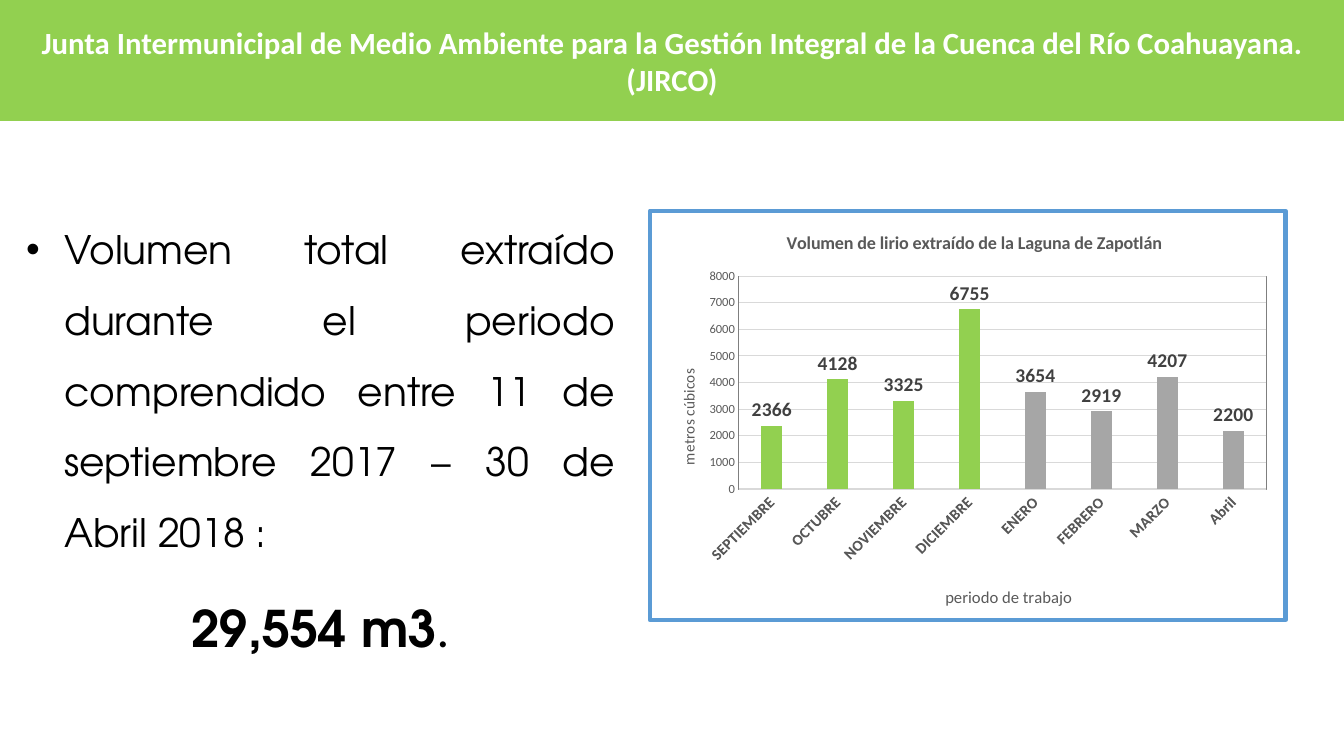
from lxml import etree
from pptx import Presentation, util as u
from pptx.chart.data import CategoryChartData
from pptx.dml.color import RGBColor
from pptx.enum import chart as ch, shapes, text
from pptx.oxml import parse_xml
from pptx.oxml.ns import nsdecls, qn

COLORS = {"green": "92D050", "white": "FFFFFF", "black": "000000", "blue": "5B9BD5",
          "gray": "A6A6A6", "text": "595959", "label": "404040", "grid": "D9D9D9",
          "frame": "7F7F7F"}
BODY_FONT = "TeX Gyre Adventor"
VOLUMES = {"SEPTIEMBRE": 2366, "OCTUBRE": 4128, "NOVIEMBRE": 3325, "DICIEMBRE": 6755,
           "ENERO": 3654, "FEBRERO": 2919, "MARZO": 4207, "Abril": 2200}
GREEN_MONTHS = 4


def color(name):
    return RGBColor.from_string(COLORS[name])


def format_font(font, size, fill="black", bold=False, name="Calibri"):
    font.size, font.bold, font.name = u.Pt(size), bold, name
    font.color.rgb = color(fill)


def add_text(paragraph, content, align=text.PP_ALIGN.CENTER, **style):
    paragraph.alignment = align
    run = paragraph.add_run()
    run.text = content
    format_font(run.font, **style)


def set_line(line, name, width=0.75):
    line.color.rgb = color(name)
    line.width = u.Pt(width)


def add_header(slide, box):
    header = slide.shapes.add_shape(shapes.MSO_SHAPE.RECTANGLE, *box)
    header.shadow.inherit = False
    header.fill.solid()
    header.fill.fore_color.rgb = color("green")
    header.line.fill.background()
    frame = header.text_frame
    frame.word_wrap = True
    frame.vertical_anchor = text.MSO_ANCHOR.MIDDLE
    add_text(frame.paragraphs[0],
             "Junta Intermunicipal de Medio Ambiente para la Gestión Integral "
             "de la Cuenca del Río Coahuayana. (JIRCO)",
             size=22, fill="white", bold=True)


def add_summary(slide, box):
    frame = slide.shapes.add_textbox(*box).text_frame
    frame.word_wrap = True
    frame.auto_size = text.MSO_AUTO_SIZE.SHAPE_TO_FIT_TEXT
    period, total = frame.paragraphs[0], frame.add_paragraph()
    for paragraph in (period, total):
        paragraph.line_spacing = 1.5
        paragraph.space_after = u.Pt(8)

    # Bulleted period with a hanging indent
    properties = period._p.get_or_add_pPr()
    indent = u.Inches(0.38)
    properties.set("marL", str(indent))
    properties.set("indent", str(-indent))
    etree.SubElement(properties, qn("a:buFont")).set("typeface", "Arial")
    etree.SubElement(properties, qn("a:buChar")).set("char", "•")
    add_text(period, "Volumen total extraído durante el periodo comprendido entre "
             "11 de septiembre 2017 – 30 de Abril 2018 :",
             align=text.PP_ALIGN.JUSTIFY, size=28, name=BODY_FONT)

    # Total
    add_text(total, "29,554 m3", size=36, bold=True, name=BODY_FONT)
    add_text(total, ".", size=36)


def set_layout(element, x, y, width=None, height=None):
    """Place a chart part by shares of the chart's size."""
    for old in element.findall(qn("c:layout")):
        element.remove(old)
    layout = etree.Element(qn("c:layout"))
    manual = etree.SubElement(layout, qn("c:manualLayout"))
    values = [("xMode", "edge"), ("yMode", "edge"), ("x", x), ("y", y)]
    if width:
        values.insert(0, ("layoutTarget", "inner"))
        values += [("w", width), ("h", height)]
    for tag, value in values:
        etree.SubElement(manual, qn(f"c:{tag}")).set("val", str(value))
    caption = element.find(qn("c:tx"))
    if caption is None:
        element.insert(0, layout)
    else:
        caption.addnext(layout)


def add_title(title, content, x, y, rotation=0, **style):
    frame = title.text_frame
    add_text(frame.paragraphs[0], content, fill="text", **style)
    body = frame._txBody.find(qn("a:bodyPr"))
    body.set("rot", str(rotation * 60000))
    body.set("vert", "horz")
    set_layout(title._element, x, y)


def outline(name, width):
    return parse_xml(
        f'<c:spPr {nsdecls("c", "a")}><a:noFill/><a:ln w="{u.Pt(width)}"><a:solidFill>'
        f'<a:srgbClr val="{COLORS[name]}"/></a:solidFill></a:ln></c:spPr>')


def add_volume_chart(slide, box):
    data = CategoryChartData()
    data.categories = list(VOLUMES)
    data.add_series("Volumen", list(VOLUMES.values()))
    chart = slide.shapes.add_chart(ch.XL_CHART_TYPE.COLUMN_CLUSTERED, *box, data).chart
    format_font(chart.font, 10)
    chart.has_legend = False

    # Bars and value labels
    plot = chart.plots[0]
    plot.gap_width, plot.overlap, plot.vary_by_categories = 219, -27, False
    series = plot.series[0]
    series.format.fill.solid()
    series.format.fill.fore_color.rgb = color("gray")
    for index in range(GREEN_MONTHS):
        fill = series.points[index].format.fill
        fill.solid()
        fill.fore_color.rgb = color("green")
    labels = series.data_labels
    labels.show_value = True
    labels.position = ch.XL_LABEL_POSITION.OUTSIDE_END
    format_font(labels.font, 14, "label", True)

    # Axes
    months, volume = chart.category_axis, chart.value_axis
    for axis in (months, volume):
        axis.major_tick_mark = axis.minor_tick_mark = ch.XL_TICK_MARK.NONE
    format_font(months.tick_labels.font, 11, "text", True)
    format_font(volume.tick_labels.font, 9, "text")
    months._element.find(qn("c:txPr")).find(qn("a:bodyPr")).set("rot", str(-45 * 60000))
    set_line(months.format.line, "grid")
    volume.format.line.fill.background()
    volume.minimum_scale, volume.maximum_scale, volume.major_unit = 0, 8000, 1000
    set_line(volume.major_gridlines.format.line, "grid")

    # Titles
    chart.has_title = True
    add_title(chart.chart_title, "Volumen de lirio extraído de la Laguna de Zapotlán",
              0.21, 0.04, size=13, bold=True)
    add_title(months.axis_title, "periodo de trabajo", 0.46, 0.91, size=12)
    add_title(volume.axis_title, "metros cúbicos", 0.04, 0.38, rotation=-90, size=11)

    # Plot area and border
    plot_area = chart.element.chart.plotArea
    set_layout(plot_area, 0.14, 0.16, 0.83, 0.52)
    plot_area.append(outline("frame", 0.75))
    chart.element.chart.addnext(outline("blue", 3))


def main():
    presentation = Presentation()
    presentation.slide_width, presentation.slide_height = u.Inches(13.33), u.Inches(7.5)
    slide = presentation.slides.add_slide(presentation.slide_layouts[6])

    def area(left, top, width, height):
        """Turn shares of the slide into a box."""
        return [int(share * side) for share, side in zip(
            (left, top, width, height),
            (presentation.slide_width, presentation.slide_height) * 2)]

    add_header(slide, area(0, 0, 1, 0.16))
    add_summary(slide, area(0.012, 0.261, 0.453, 0.621))
    add_volume_chart(slide, area(0.482, 0.276, 0.476, 0.547))
    presentation.save("out.pptx")


if __name__ == "__main__":
    main()
